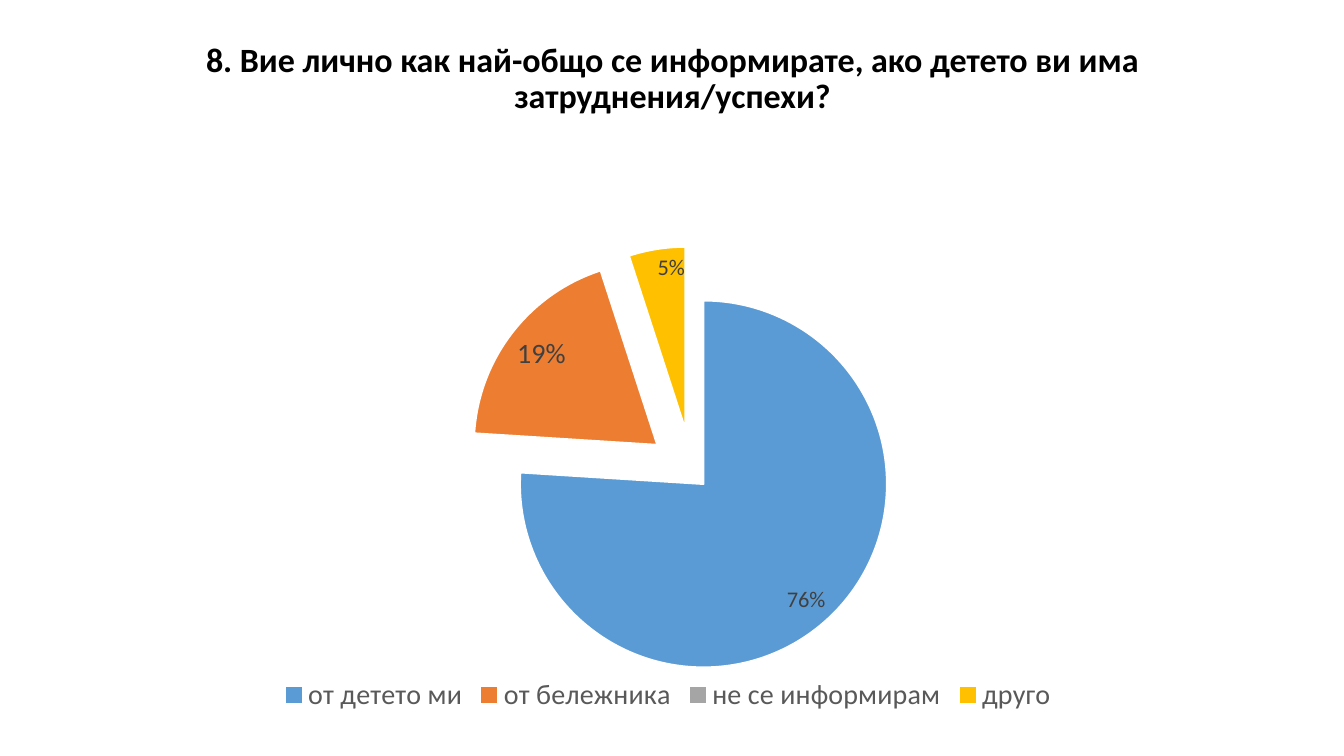
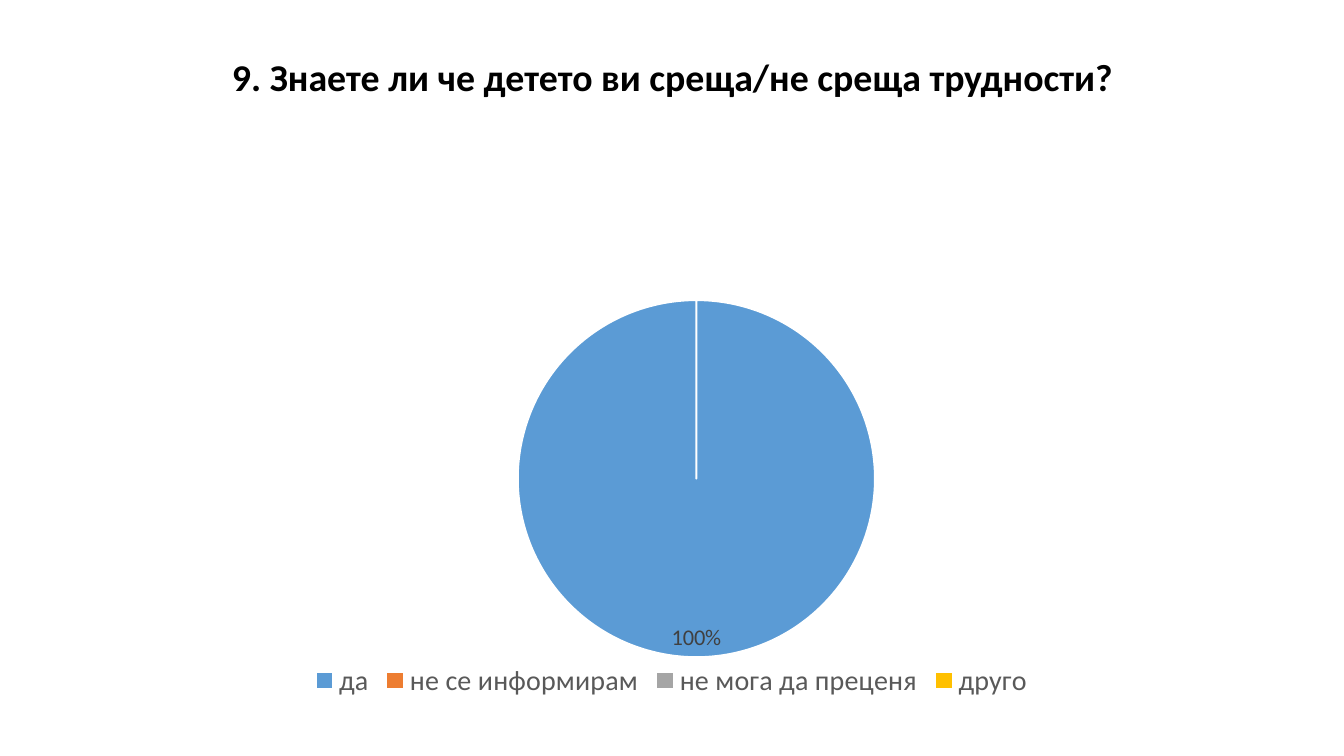
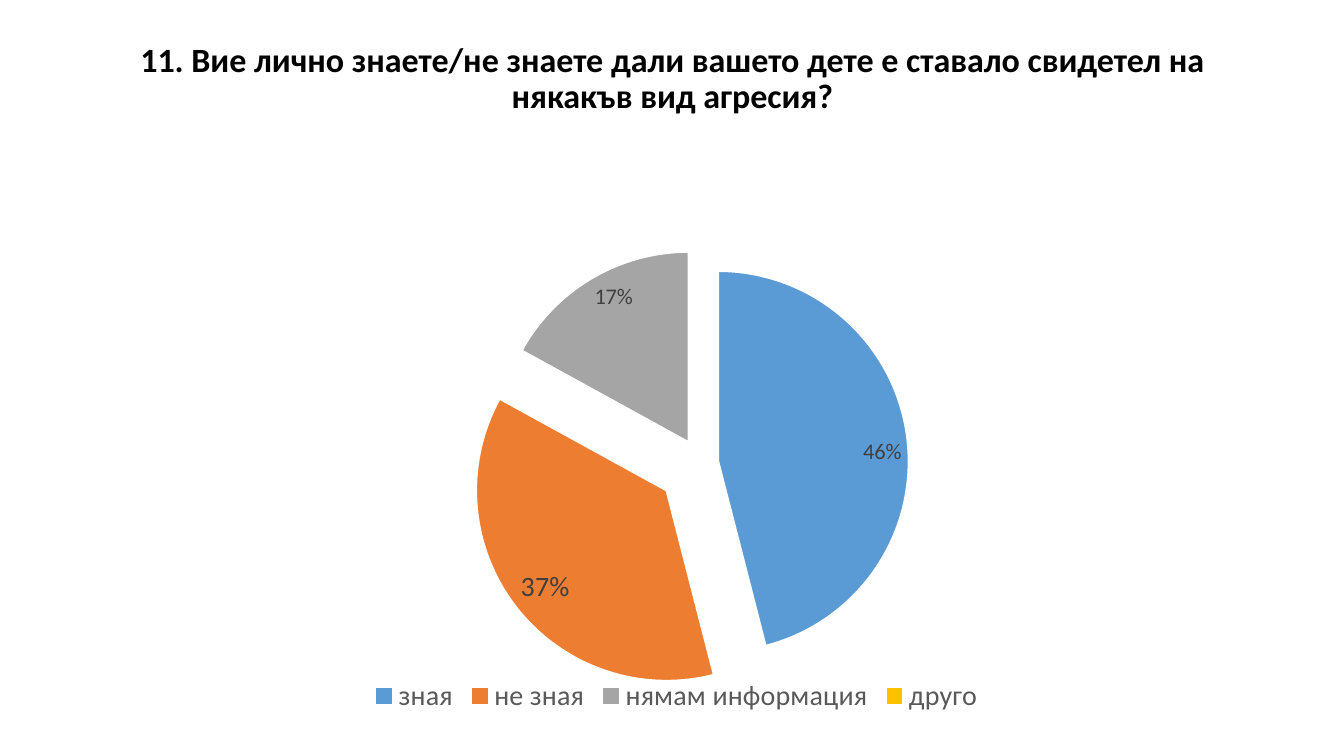
from lxml.etree import SubElement
from pptx import Presentation
from pptx.chart.data import CategoryChartData
from pptx.dml.color import RGBColor
from pptx.enum.chart import XL_CHART_TYPE as ChartType
from pptx.enum.chart import XL_LABEL_POSITION as LabelPosition
from pptx.enum.chart import XL_LEGEND_POSITION as LegendPosition
from pptx.enum.text import MSO_ANCHOR as Anchor
from pptx.enum.text import PP_ALIGN as Align
from pptx.oxml import parse_xml
from pptx.oxml.ns import nsdecls, qn
from pptx.util import Inches, Pt

FONT = "Calibri"
BLACK, WHITE = "000000", "FFFFFF"
LEGEND_GREY, LABEL_GREY = "595959", "404040"
SLICE_COLOURS = ["5B9BD5", "ED7D31", "A5A5A5", "FFC000"]
LABEL_SIZES = [16, 20, 16, 16]
PLOT_LAYOUT = (
    f'<c:layout {nsdecls("c")}><c:manualLayout><c:layoutTarget val="inner"/>'
    '<c:xMode val="edge"/><c:yMode val="edge"/><c:x val="0.04"/><c:y val="0.192"/>'
    '<c:w val="0.96"/><c:h val="0.691"/></c:manualLayout></c:layout>'
)

# title, title size, chart box, answers as (name, share, explosion in percent)
QUESTIONS = [
    ("8. Вие лично как най-общо се информирате, ако детето ви има затруднения/успехи?",
     24.3, (0.61, 1.85, 12.03, 5.27),
     [("от детето ми", 0.76, 9), ("от бележника", 0.19, 24),
      ("не се информирам", 0, 0), ("друго", 0.05, 23)]),
    ("9. Знаете ли че детето ви среща/не среща трудности?",
     27, (0.49, 1.85, 12.34, 5.13),
     [("да", 1, 8), ("не се информирам", 0, 0),
      ("не мога да преценя", 0, 0), ("друго", 0, 0)]),
    ("11. Вие лично знаете/не знаете дали вашето дете е ставало свидетел на някакъв вид агресия?",
     24.3, (0.59, 1.66, 12.24, 5.47),
     [("зная", 0.46, 9), ("не зная", 0.37, 23),
      ("нямам информация", 0.17, 13), ("друго", 0, 0)]),
]


def colour(value):
    return RGBColor.from_string(value)


def style_font(font, size, value):
    font.name = FONT
    font.size = Pt(size)
    font.color.rgb = colour(value)


deck = Presentation()
deck.slide_width, deck.slide_height = Inches(13.33), Inches(7.5)

for title, title_size, chart_box, answers in QUESTIONS:
    page = deck.slides.add_slide(deck.slide_layouts[6])

    box = page.shapes.add_textbox(Inches(0.92), Inches(0.4), Inches(11.5), Inches(1.45))
    frame = box.text_frame
    frame.word_wrap = True
    frame.vertical_anchor = Anchor.MIDDLE
    frame.margin_bottom = Inches(0.72)
    para = frame.paragraphs[0]
    para.alignment = Align.CENTER
    para.line_spacing = 0.9
    span = para.add_run()
    span.text = title
    span.font.bold = True
    style_font(span.font, title_size, BLACK)

    names, shares, explosions = zip(*answers)
    data = CategoryChartData(number_format="0%")
    data.categories = names
    data.add_series("Series 1", shares)
    chart = page.shapes.add_chart(ChartType.PIE, *map(Inches, chart_box), data).chart
    chart.has_title = False
    style_font(chart.font, 10, BLACK)
    chart.has_legend = True
    chart.legend.position = LegendPosition.BOTTOM
    chart.legend.include_in_layout = False
    style_font(chart.legend.font, 20, LEGEND_GREY)

    plot_area = chart.plots[0]._element.getparent()
    for layout in plot_area.findall(qn("c:layout")):
        plot_area.remove(layout)
    plot_area.insert(0, parse_xml(PLOT_LAYOUT))

    pie = chart.plots[0]
    pie.vary_by_categories = True
    series = pie.series[0]
    labels = series.data_labels
    labels.show_value = True
    labels.number_format = "0%"
    labels.number_format_is_linked = False
    labels.position = LabelPosition.INSIDE_END
    style_font(labels.font, 20, LABEL_GREY)

    for index, (share, explosion) in enumerate(zip(shares, explosions)):
        point = series.points[index]
        point.format.fill.solid()
        point.format.fill.fore_color.rgb = colour(SLICE_COLOURS[index])
        point.format.line.color.rgb = colour(WHITE)
        point.format.line.width = Pt(1.5)
        if explosion:
            slice_xml = series._element.findall(qn("c:dPt"))[index]
            slice_xml.find(qn("c:spPr")).addprevious(
                parse_xml(f'<c:explosion {nsdecls("c")} val="{explosion}"/>'))

        style_font(point.data_label.font, LABEL_SIZES[index], LABEL_GREY)
        point.data_label.position = LabelPosition.INSIDE_END
        if share == 0:
            label_xml = labels._element.findall(qn("c:dLbl"))[index]
            for child in list(label_xml)[1:]:
                label_xml.remove(child)
            SubElement(label_xml, qn("c:delete")).set("val", "1")

deck.save("out.pptx")
